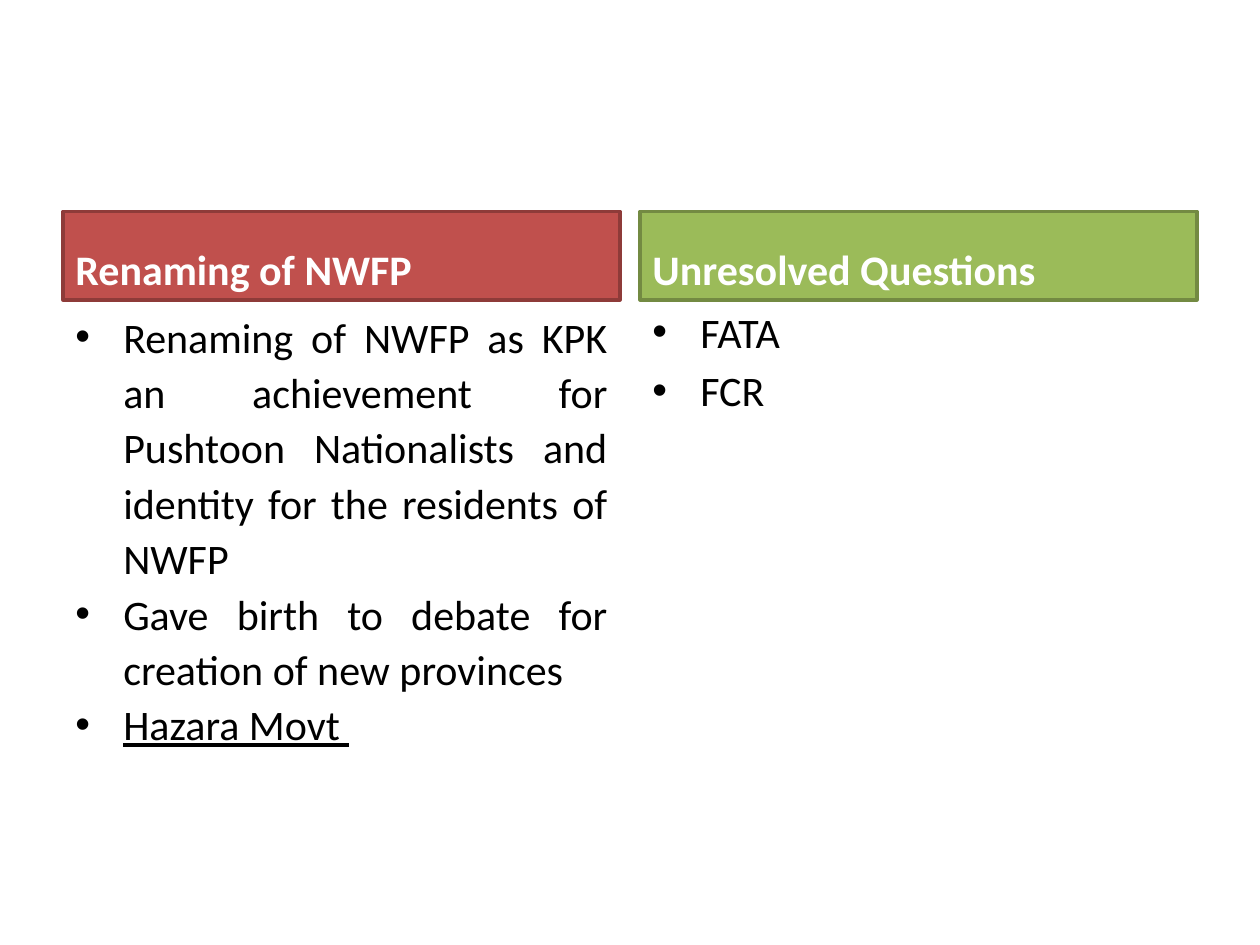
"""Build a two-column comparison slide on the renaming of NWFP."""
from dataclasses import dataclass

from lxml import etree
from pptx import Presentation
from pptx.dml.color import RGBColor
from pptx.enum import shapes, text
from pptx.oxml import ns
from pptx.util import Inches, Pt

COLUMN_WIDTH = 4.42
HEADING_TOP, HEADING_HEIGHT = 1.68, 0.7
POINTS_TOP, POINTS_HEIGHT = HEADING_TOP + HEADING_HEIGHT, 4.32
INDENT = Inches(0.38)


@dataclass
class Point:
    wording: str
    underlined: bool = False


@dataclass
class Column:
    left: float
    heading: str
    fill: str
    border: str
    points: list[Point]
    alignment: text.PP_ALIGN = text.PP_ALIGN.LEFT
    line_spacing: float = 1.0
    gap: float = 0


COLUMNS = [
    Column(0.5, "Renaming of NWFP", "C0504D", "8E3B39", [
        Point("Renaming of NWFP as KPK an achievement for Pushtoon Nationalists "
              "and identity for the residents of NWFP"),
        Point("Gave birth to debate for creation of new provinces"),
        Point("Hazara Movt ", underlined=True),
    ], alignment=text.PP_ALIGN.JUSTIFY, line_spacing=1.1),
    Column(5.08, "Unresolved Questions", "9BBB59", "738A42",
           [Point("FATA"), Point("FCR")], gap=4.8),
]


def color(value: str) -> RGBColor:
    """Turn a hex string into a colour."""
    return RGBColor.from_string(value)


def add_run(paragraph, wording: str, ink: str, bold=False, underlined=False) -> None:
    """Add one formatted run to a paragraph."""
    run = paragraph.add_run()
    run.text = wording
    font = run.font
    font.name, font.size = "Calibri", Pt(24)
    font.bold, font.underline = bold, underlined
    font.color.rgb = color(ink)


def add_bullet(paragraph) -> None:
    """Give a paragraph a hanging bullet."""
    properties = paragraph._p.get_or_add_pPr()
    properties.set("marL", str(INDENT))
    properties.set("indent", str(-INDENT))
    etree.SubElement(properties, ns.qn("a:buFont")).set("typeface", "Arial")
    etree.SubElement(properties, ns.qn("a:buChar")).set("char", "•")


def draw_heading(slide, column: Column) -> None:
    """Draw the coloured heading bar of a column."""
    bar = slide.shapes.add_shape(
        shapes.MSO_SHAPE.RECTANGLE, Inches(column.left), Inches(HEADING_TOP),
        Inches(COLUMN_WIDTH), Inches(HEADING_HEIGHT))
    bar.shadow.inherit = False
    bar.fill.solid()
    bar.fill.fore_color.rgb = color(column.fill)
    bar.line.color.rgb = color(column.border)
    bar.line.width = Pt(2)
    frame = bar.text_frame
    frame.word_wrap = True
    frame.vertical_anchor = text.MSO_ANCHOR.BOTTOM
    paragraph = frame.paragraphs[0]
    paragraph.alignment = text.PP_ALIGN.LEFT
    add_run(paragraph, column.heading, "FFFFFF", bold=True)


def draw_points(slide, column: Column) -> None:
    """Draw the bulleted points of a column."""
    body = slide.shapes.add_textbox(
        Inches(column.left), Inches(POINTS_TOP),
        Inches(COLUMN_WIDTH), Inches(POINTS_HEIGHT))
    frame = body.text_frame
    frame.word_wrap = True
    for index, point in enumerate(column.points):
        paragraph = frame.add_paragraph() if index else frame.paragraphs[0]
        add_bullet(paragraph)
        paragraph.alignment = column.alignment
        paragraph.line_spacing = column.line_spacing
        paragraph.space_before = Pt(column.gap if index else 0)
        add_run(paragraph, point.wording, "000000", underlined=point.underlined)


def main() -> None:
    """Build and save the slide."""
    presentation = Presentation()
    presentation.slide_width, presentation.slide_height = Inches(10), Inches(7.5)
    slide = presentation.slides.add_slide(presentation.slide_layouts[6])
    for column in COLUMNS:
        draw_heading(slide, column)
        draw_points(slide, column)
    presentation.save("out.pptx")


if __name__ == "__main__":
    main()
